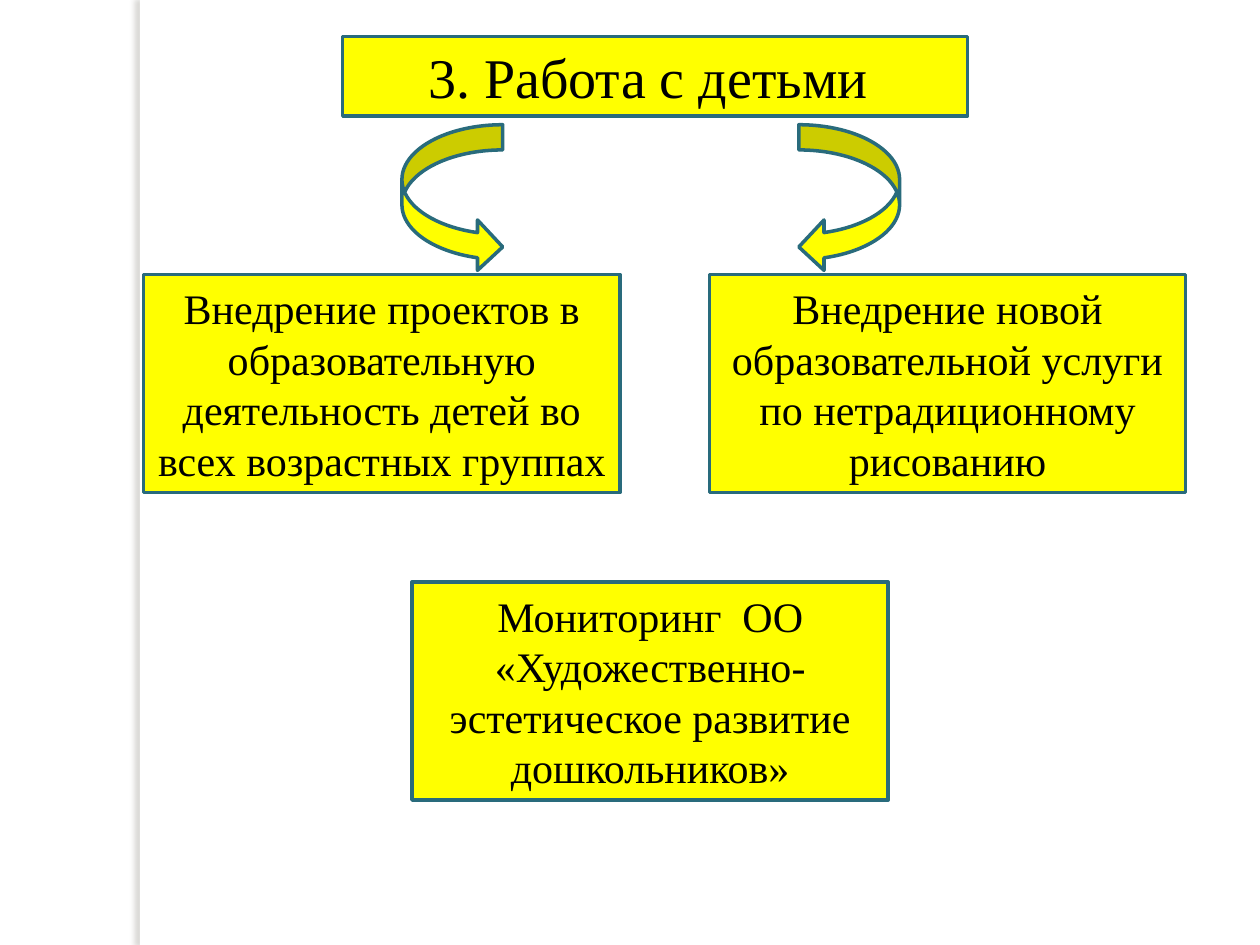
from dataclasses import dataclass

import pptx
import pptx.dml.color
import pptx.enum.shapes
import pptx.enum.text
import pptx.oxml.ns
import pptx.shapes.autoshape
import pptx.slide
import pptx.util
from lxml import etree

Inches = pptx.util.Inches
Preset = pptx.enum.shapes.MSO_SHAPE


@dataclass(frozen=True)
class Theme:
    paper: str = "FFFFFF"
    fill: str = "FFFF00"
    outline: str = "296B7C"
    text: str = "000000"
    shade: str = "736F63"
    font: str = "Times New Roman"
    title_size: int = 32
    body_size: int = 24
    line_width: int = 2


@dataclass(frozen=True)
class Block:
    left: float
    top: float
    width: float
    height: float
    preset: Preset = Preset.RECTANGLE
    text: str = ""
    size: int = 0


THEME = Theme()
BODY_WIDTH, BODY_HEIGHT = 3.78, 1.73
ROW_TOP = 2.18
ARROW_TOP, ARROW_WIDTH, ARROW_HEIGHT = 0.99, 0.8, 1.17


def body_block(left: float, top: float, text: str) -> Block:
    return Block(left, top, BODY_WIDTH, BODY_HEIGHT, text=text, size=THEME.body_size)


def arrow_block(left: float, preset: Preset) -> Block:
    return Block(left, ARROW_TOP, ARROW_WIDTH, ARROW_HEIGHT, preset)


BLOCKS = (
    Block(2.72, 0.29, 4.96, 0.63, text="3. Работа с детьми ", size=THEME.title_size),
    body_block(1.14, ROW_TOP, "Внедрение проектов в образовательную деятельность "
                              "детей во всех возрастных группах"),
    body_block(5.63, ROW_TOP, "Внедрение новой образовательной услуги "
                              "по нетрадиционному рисованию"),
    body_block(3.27, 4.62, "Мониторинг  ОО «Художественно-эстетическое "
                           "развитие дошкольников»"),
    arrow_block(3.19, Preset.CURVED_RIGHT_ARROW),
    arrow_block(6.34, Preset.CURVED_LEFT_ARROW),
)


def color(value: str) -> pptx.dml.color.RGBColor:
    return pptx.dml.color.RGBColor.from_string(value)


def add_shape(page: pptx.slide.Slide, block: Block,
              fill: str) -> pptx.shapes.autoshape.Shape:
    """Add the bare filled shape, without line, shadow or text."""
    lengths = map(Inches, (block.left, block.top, block.width, block.height))
    shape = page.shapes.add_shape(block.preset, *lengths)
    shape.shadow.inherit = False
    shape.fill.solid()
    shape.fill.fore_color.rgb = color(fill)
    shape.line.fill.background()
    return shape


def add_side_strip(page: pptx.slide.Slide) -> None:
    """Add the white strip whose soft shadow falls to the left."""
    strip = add_shape(page, Block(1.11, 0, 0.08, 7.5), THEME.paper)
    qn = pptx.oxml.ns.qn
    effects = strip.element.spPr.find(qn("a:effectLst"))
    distance = str(pptx.util.Pt(3))
    shadow = etree.SubElement(effects, qn("a:outerShdw"), blurRad=distance,
                              dist=distance, dir=str(180 * 60000),
                              algn="tl", rotWithShape="0")
    tint = etree.SubElement(shadow, qn("a:srgbClr"), val=THEME.shade)
    etree.SubElement(tint, qn("a:alpha"), val="25000")


def add_block(page: pptx.slide.Slide, block: Block) -> None:
    shape = add_shape(page, block, THEME.fill)
    shape.line.color.rgb = color(THEME.outline)
    shape.line.width = pptx.util.Pt(THEME.line_width)
    if not block.text:
        return
    frame = shape.text_frame
    frame.word_wrap = True
    frame.vertical_anchor = pptx.enum.text.MSO_ANCHOR.MIDDLE
    para = frame.paragraphs[0]
    para.alignment = pptx.enum.text.PP_ALIGN.CENTER
    span = para.add_run()
    span.text = block.text
    span.font.color.rgb = color(THEME.text)
    formats = {"name": THEME.font, "size": pptx.util.Pt(block.size)}
    for name, value in formats.items():
        setattr(span.font, name, value)


def main() -> None:
    deck = pptx.Presentation()
    deck.slide_width, deck.slide_height = Inches(10), Inches(7.5)
    page = deck.slides.add_slide(deck.slide_layouts[6])
    page.background.fill.solid()
    page.background.fill.fore_color.rgb = color(THEME.paper)
    add_side_strip(page)
    for block in BLOCKS:
        add_block(page, block)
    deck.save("out.pptx")


if __name__ == "__main__":
    main()
